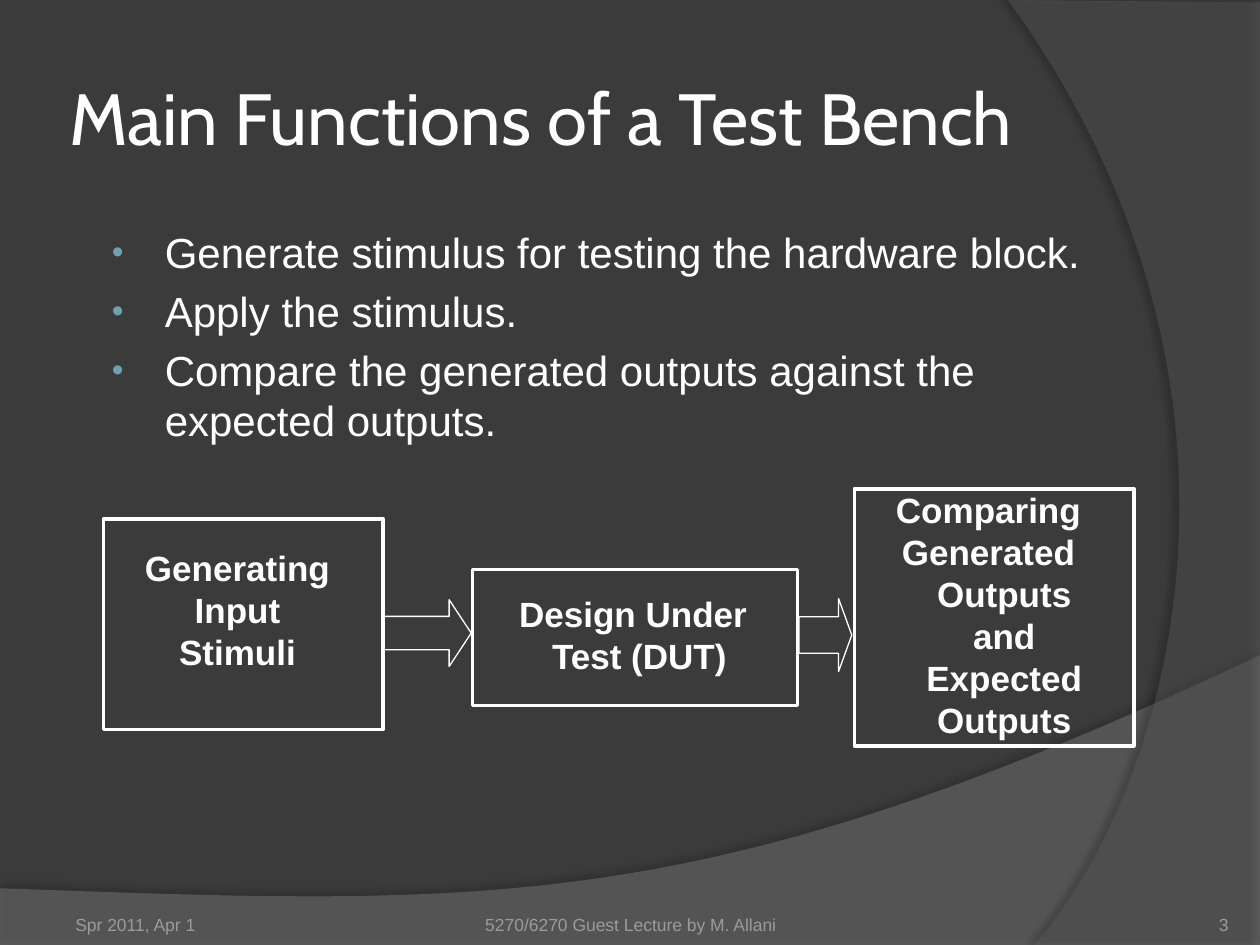
from lxml import etree
from pptx import Presentation
from pptx import util as u
from pptx.dml.color import RGBColor
from pptx.enum import shapes, text
from pptx.oxml import ns

WHITE, GREY = "FFFFFF", "9D9B9A"
LEFT, CENTER, RIGHT = text.PP_ALIGN.LEFT, text.PP_ALIGN.CENTER, text.PP_ALIGN.RIGHT
TOP, MIDDLE, BOTTOM = text.MSO_ANCHOR.TOP, text.MSO_ANCHOR.MIDDLE, text.MSO_ANCHOR.BOTTOM


def color(value):
    return RGBColor.from_string(value)


def child(parent, tag, **attributes):
    values = {name: str(value) for name, value in attributes.items()}
    return etree.SubElement(parent, ns.qn(tag), values)


def curve(start, control1, control2, end, steps=48):
    points = []
    for step in range(1, steps + 1):
        t = step / steps
        weights = (1 - t) ** 3, 3 * t * (1 - t) ** 2, 3 * t ** 2 * (1 - t), t ** 3
        corners = start, control1, control2, end
        points.append(tuple(sum(w * c[axis] for w, c in zip(weights, corners)) for axis in (0, 1)))
    return points


def write(frame, paragraphs, size=20, font="Arial", fill=WHITE, bold=False, align=LEFT,
          hanging=None, before=None, bullet=None):
    for index, content in enumerate(paragraphs):
        paragraph = frame.paragraphs[0] if index == 0 else frame.add_paragraph()
        paragraph.text = content
        paragraph.alignment = align
        if before is not None:
            paragraph.space_before = u.Pt(before)
        properties = paragraph._p.get_or_add_pPr()
        if hanging:
            margin, first = hanging
            properties.set("marL", str(u.Inches(margin)))
            properties.set("indent", str(u.Inches(first)))
        if bullet:
            child(child(properties, "a:buClr"), "a:srgbClr", val=bullet)
            child(properties, "a:buSzPct", val=80000)
            child(properties, "a:buFont", typeface="Arial")
            child(properties, "a:buChar", char="•")
        for run in paragraph.runs:
            run.font.size = u.Pt(size)
            run.font.name = font
            run.font.bold = bold
            run.font.color.rgb = color(fill)


class Deck:
    def __init__(self, background):
        self.presentation = Presentation()
        self.presentation.slide_width = u.Inches(10)
        self.presentation.slide_height = u.Inches(7.5)
        self.slide = self.presentation.slides.add_slide(self.presentation.slide_layouts[6])
        self.slide.background.fill.solid()
        self.slide.background.fill.fore_color.rgb = color(background)

    def swoosh(self, points, fill, opacity, shade, distance, direction):
        start, *rest = [(u.Inches(x), u.Inches(y)) for x, y in points]
        builder = self.slide.shapes.build_freeform(*start)
        builder.add_line_segments(rest, close=True)
        band = builder.convert_to_shape()
        band.fill.solid()
        band.fill.fore_color.rgb = color(fill)
        band.line.fill.background()
        band.shadow.inherit = False
        properties = band._element.spPr
        tint = properties.find(ns.qn("a:solidFill"))[0]
        child(tint, "a:alpha", val=opacity * 1000)
        shadow = child(properties.find(ns.qn("a:effectLst")), "a:outerShdw", blurRad=u.Pt(4),
                       dist=u.Pt(distance), dir=direction * 60000, algn="ctr", rotWithShape=0)
        child(child(shadow, "a:srgbClr", val="000000"), "a:alpha", val=shade * 1000)

    def outline(self, preset, place, width, adjustments=()):
        figure = self.slide.shapes.add_shape(preset, *map(u.Inches, place))
        for index, value in enumerate(adjustments):
            figure.adjustments[index] = value
        figure.fill.background()
        figure.line.color.rgb = color(WHITE)
        figure.line.width = u.Pt(width)
        figure.shadow.inherit = False

    def label(self, place, paragraphs, anchor=TOP, insets=(0.1, 0.05, 0.1, 0.05), grow=False, **style):
        frame = self.slide.shapes.add_textbox(*map(u.Inches, place)).text_frame
        frame.word_wrap = True
        frame.auto_size = text.MSO_AUTO_SIZE.SHAPE_TO_FIT_TEXT if grow else text.MSO_AUTO_SIZE.NONE
        frame.vertical_anchor = anchor
        (frame.margin_left, frame.margin_top,
         frame.margin_right, frame.margin_bottom) = map(u.Inches, insets)
        write(frame, paragraphs, **style)


def main():
    deck = Deck("3B3B3B")
    lower_band = [(0, 7.05), (0, 7.5), (10, 7.5), (10, 5.2)]
    lower_band += curve((10, 5.2), (5.59, 7.29), (3.91, 7.19), (0, 7.05))
    deck.swoosh(lower_band, "7F7F7F", 45, shade=35, distance=3.5, direction=270)
    right_band = [(10, 0.02), (10, 7.5), (8.21, 7.5)]
    right_band += curve((8.21, 7.5), (9.35, 6.19), (10.18, 3), (8, 0))
    deck.swoosh(right_band, "5E5E5E", 40, shade=45, distance=4, direction=180)

    deck.label((0.5, 0.3, 8.17, 1.25), ["Main Functions of a Test Bench"], anchor=MIDDLE,
               insets=(0.05,) * 4, size=41.4, font="Cabin")
    functions = [
        "Generate stimulus for testing the hardware block.",
        "Apply the stimulus.",
        "Compare the generated outputs against the expected outputs.",
    ]
    deck.label((0.75, 1.75, 8.5, 5.08), functions, size=24, hanging=(0.46, -0.42),
               before=4.8, bullet="6EA0B0")

    stages = [
        ((0.82, 4.12, 2.22, 1.67), (0.83, 4.29, 2.11, 1.11), -0.25,
         ["Generating", "Input", "Stimuli"]),
        ((3.75, 4.52, 2.58, 1.08), (3.8, 4.65, 2.3, 0.77), -0.1,
         ["Design Under Test (DUT)"]),
        ((6.78, 3.88, 2.22, 2.04), (6.79, 3.83, 2.11, 2.12), -0.25,
         ["Comparing", "Generated Outputs\vand Expected Outputs"]),
    ]
    for box, caption, first, lines in stages:
        deck.outline(shapes.MSO_SHAPE.RECTANGLE, box, 2)
        deck.label(caption, lines, grow=True, bold=True, align=CENTER, hanging=(0.25, first))

    arrows = [((3.04, 4.76, 0.7, 0.53), 0.33), ((6.34, 4.75, 0.42, 0.58), 0.25)]
    for place, head in arrows:
        deck.outline(shapes.MSO_SHAPE.RIGHT_ARROW, place, 0.75, (0.5, head))

    footers = [
        (0.5, 2.33, "Spr 2011, Apr 1", LEFT, (0.1, 0.05, 0.1, 0)),
        (3.42, 3.17, "5270/6270 Guest Lecture by M. Allani", CENTER, (0, 0.05, 0, 0)),
        (8.92, 0.83, "3", RIGHT, (0, 0, 0, 0)),
    ]
    for left, width, footer, align, insets in footers:
        deck.label((left, 7.02, width, 0.4), [footer], anchor=BOTTOM, insets=insets,
                   size=10, fill=GREY, align=align)

    deck.presentation.save("out.pptx")


if __name__ == "__main__":
    main()
